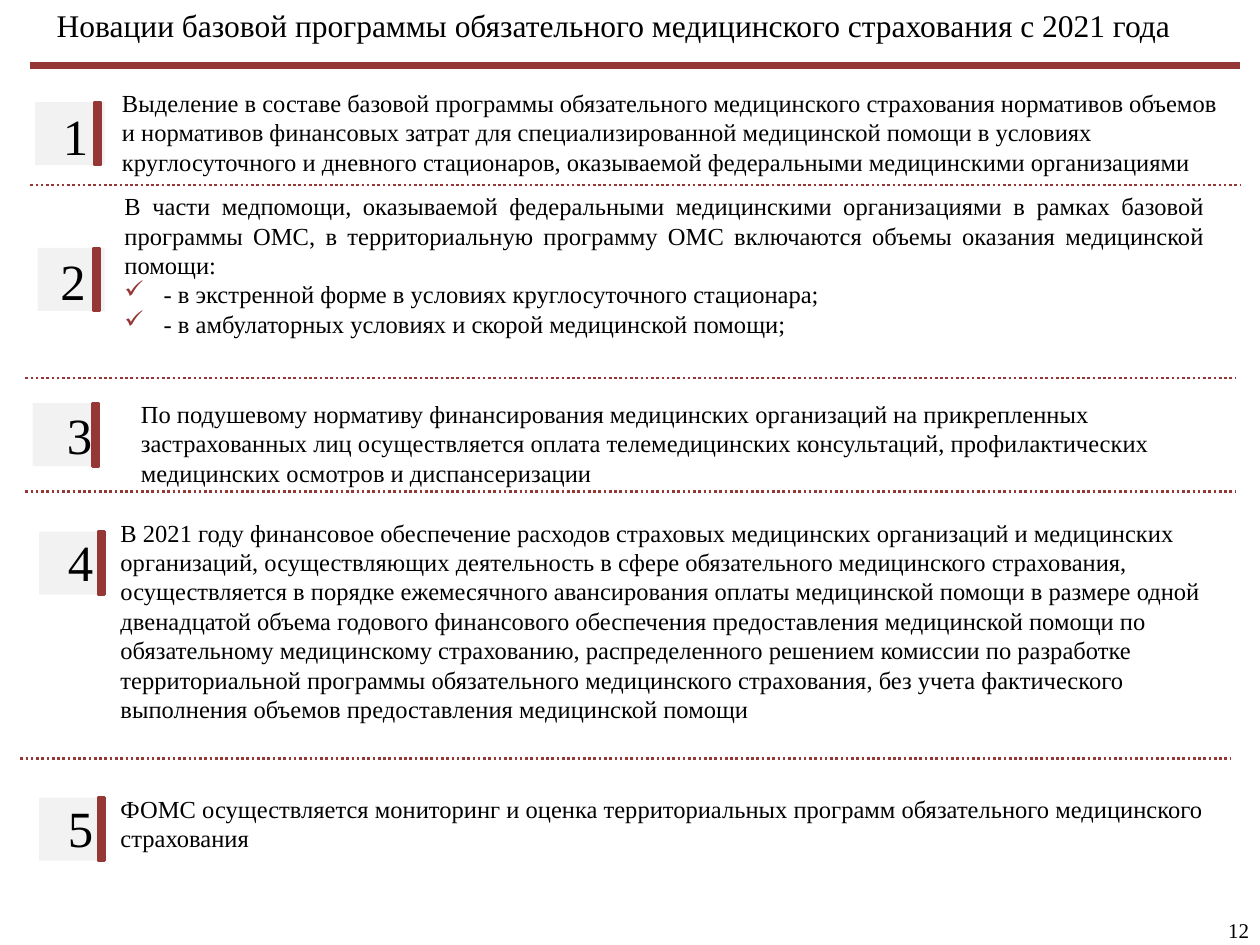
from lxml import etree
from pptx import Presentation
from pptx.dml.color import RGBColor
from pptx.enum.dml import MSO_LINE_DASH_STYLE as Dash
from pptx.enum.shapes import MSO_CONNECTOR_TYPE as Connector, MSO_SHAPE as Shape
from pptx.enum.text import MSO_ANCHOR as Anchor, MSO_AUTO_SIZE as AutoSize, PP_ALIGN as Align
from pptx.oxml.ns import qn
from pptx.util import Cm, Pt

BLACK = RGBColor(0x00, 0x00, 0x00)
MAROON = RGBColor(0x95, 0x37, 0x35)
PALE_GREY = RGBColor(0xF2, 0xF2, 0xF2)

TITLE = "Новации базовой программы обязательного медицинского страхования с 2021 года"
PAGE = "12"

# Plate: left, top, width; bar left; digit: left, top; text: left, top, width, height
INNOVATIONS = [
    ((0.71, 2.06, 1.4), 1.91, (1.09, 2.13), (2.21, 1.65, 22.89, 2.06), Align.LEFT,
     "Выделение в составе базовой программы обязательного медицинского страхования "
     "нормативов объемов и нормативов финансовых затрат для специализированной "
     "медицинской помощи в условиях круглосуточного и дневного стационаров, "
     "оказываемой федеральными медицинскими организациями", []),
    ((0.76, 5.0, 1.35), 1.88, (1.04, 5.05), (2.26, 3.73, 22.28, 3.25), Align.JUSTIFY,
     "В части медпомощи, оказываемой федеральными медицинскими организациями в рамках "
     "базовой программы ОМС, в территориальную программу ОМС включаются объемы оказания "
     "медицинской помощи:",
     ["- в экстренной форме в условиях круглосуточного стационара;",
      "- в амбулаторных условиях и скорой медицинской помощи;"]),
    ((0.66, 8.13, 1.32), 1.87, (1.17, 8.15), (2.59, 7.92, 22.43, 2.64), Align.LEFT,
     "По подушевому нормативу финансирования медицинских организаций на прикрепленных "
     "застрахованных лиц осуществляется оплата телемедицинских консультаций, "
     "профилактических медицинских осмотров и диспансеризации", []),
    ((0.79, 10.72, 1.35), 1.98, (1.19, 10.72), (2.18, 10.31, 22.45, 4.45), Align.LEFT,
     "В 2021 году финансовое обеспечение расходов страховых медицинских организаций и "
     "медицинских организаций, осуществляющих деятельность в сфере обязательного "
     "медицинского страхования, осуществляется в порядке ежемесячного авансирования "
     "оплаты медицинской помощи в размере одной двенадцатой объема годового финансового "
     "обеспечения предоставления медицинской помощи по обязательному медицинскому "
     "страхованию, распределенного решением комиссии по разработке территориальной "
     "программы обязательного медицинского страхования, без учета фактического "
     "выполнения объемов предоставления медицинской помощи", []),
    ((0.79, 16.08, 1.35), 1.98, (1.19, 16.08), (2.18, 15.88, 22.45, 1.45), Align.LEFT,
     "ФОМС осуществляется мониторинг и оценка территориальных программ обязательного "
     "медицинского страхования", []),
]
DIVIDERS = [(0.61, 3.73), (0.51, 7.62), (0.51, 9.91), (0.41, 15.29)]
RULE_WIDTH = 24.38
PLATE_HEIGHT = 1.27
BAR_WIDTH = 0.13
DIGIT_SIZE = (0.61, 1.19)
DIGIT_INSETS = {"margin_left": Cm(0.18), "margin_right": Cm(0.18),
                "margin_top": Cm(0.1), "margin_bottom": Cm(0.1)}


def apply(target, formats):
    for name, value in formats.items():
        setattr(target, name, value)


class SlideBuilder:
    font_name = "Times New Roman"

    def __init__(self, slide):
        self.slide = slide

    def fill_paragraph(self, paragraph, text, size, align):
        paragraph.alignment = align
        run = paragraph.add_run()
        run.text = text
        apply(run.font, {"name": self.font_name, "size": Pt(size)})
        run.font.color.rgb = BLACK

    def title(self, text, box, size):
        heading = self.slide.shapes.title
        apply(heading, dict(zip(("left", "top", "width", "height"), map(Cm, box))))
        apply(heading.text_frame, {"word_wrap": True, "auto_size": AutoSize.NONE,
                                   "vertical_anchor": Anchor.TOP})
        self.fill_paragraph(heading.text_frame.paragraphs[0], text, size, Align.LEFT)

    def text(self, text, box, size, align=Align.LEFT, **frame_formats):
        frame = self.slide.shapes.add_textbox(*map(Cm, box)).text_frame
        apply(frame, {"word_wrap": True, **frame_formats})
        self.fill_paragraph(frame.paragraphs[0], text, size, align)
        return frame

    def check_item(self, frame, text, size):
        item = frame.add_paragraph()
        self.fill_paragraph(item, text, size, Align.JUSTIFY)
        props = item._p.get_or_add_pPr()
        props.set("marL", str(Cm(0.79)))
        props.set("indent", str(-Cm(0.79)))
        color = etree.SubElement(props, qn("a:buClr"))
        etree.SubElement(color, qn("a:srgbClr"), val=str(MAROON))
        etree.SubElement(props, qn("a:buChar"), char="✓")

    def block(self, box, fill, outline=None):
        block = self.slide.shapes.add_shape(Shape.RECTANGLE, *map(Cm, box))
        block.shadow.inherit = False
        block.fill.solid()
        block.fill.fore_color.rgb = fill
        if outline:
            block.line.color.rgb = fill
            block.line.width = Pt(outline)
        else:
            block.line.fill.background()

    def rule(self, left, top, weight, dash=None):
        ends = map(Cm, (left, top, left + RULE_WIDTH, top))
        rule = self.slide.shapes.add_connector(Connector.STRAIGHT, *ends)
        rule.line.color.rgb = MAROON
        apply(rule.line, {"width": Pt(weight), "dash_style": dash})
        etree.SubElement(rule._element.spPr, qn("a:effectLst"))


def main():
    deck = Presentation()
    apply(deck, {"slide_width": Cm(25.4), "slide_height": Cm(19.05)})
    builder = SlideBuilder(deck.slides.add_slide(deck.slide_layouts[5]))

    # Heading
    builder.title(TITLE, (0.89, 0, 23.83, 1.02), 18)
    builder.rule(0.61, 1.32, 4.5)

    # Numbered innovations
    for number, (plate, bar_left, digit, body, align, text, checks) in enumerate(INNOVATIONS, 1):
        builder.block((*plate, PLATE_HEIGHT), PALE_GREY)
        builder.block((bar_left, plate[1], BAR_WIDTH, PLATE_HEIGHT), MAROON, 1.5)
        builder.text(str(number), (*digit, *DIGIT_SIZE), 29, Align.CENTER,
                     vertical_anchor=Anchor.MIDDLE, **DIGIT_INSETS)
        frame = builder.text(text, body, 14, align)
        for check in checks:
            builder.check_item(frame, check, 14)

    # Dotted dividers
    for left, top in DIVIDERS:
        builder.rule(left, top, 1.5, Dash.ROUND_DOT)

    # Page number
    builder.text(PAGE, (19.71, 18.24, 5.72, 1.02), 12, Align.RIGHT,
                 vertical_anchor=Anchor.MIDDLE)

    deck.save("out.pptx")


if __name__ == "__main__":
    main()
